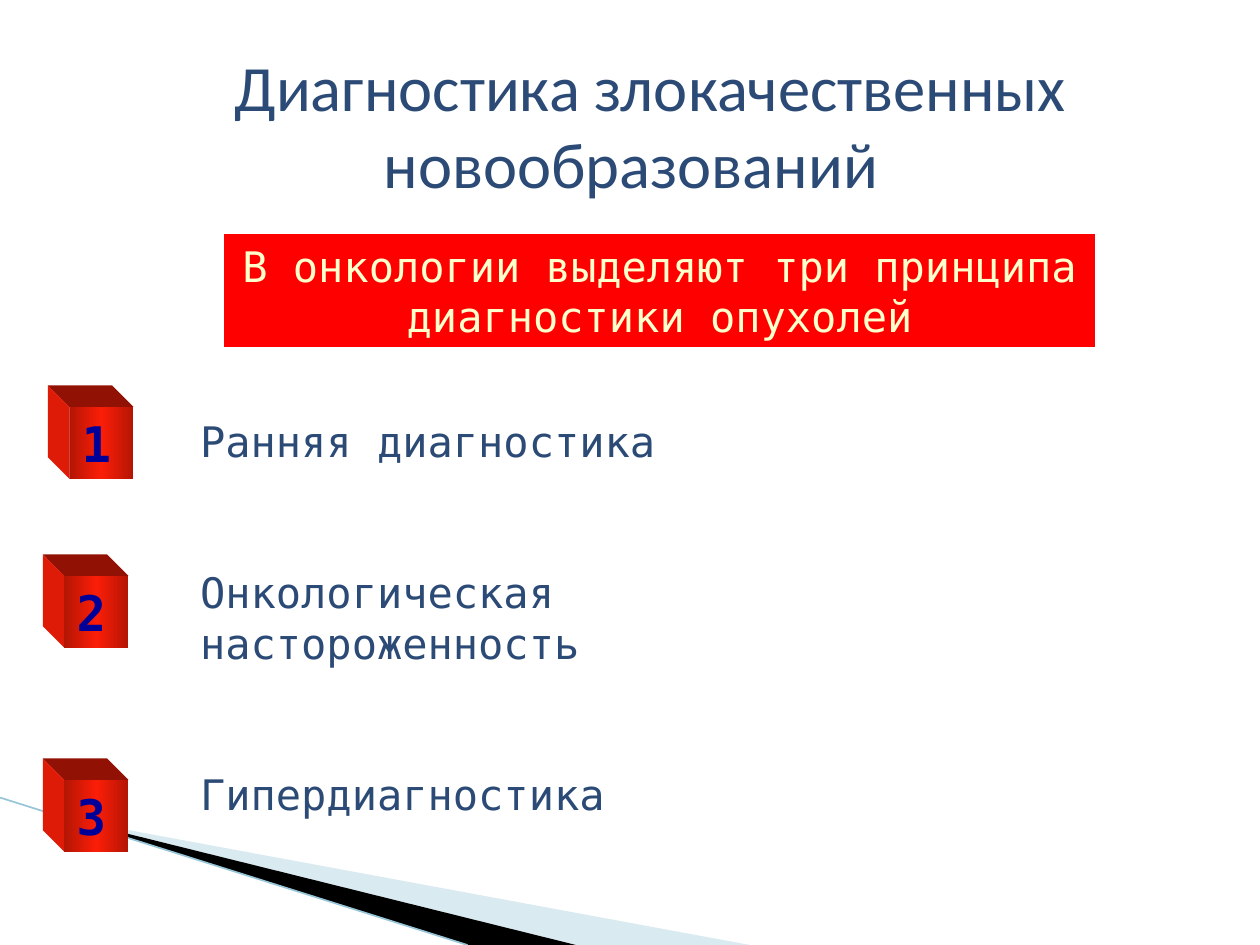
from lxml.etree import SubElement
from pptx import Presentation
from pptx.dml.color import RGBColor
from pptx.enum.shapes import MSO_CONNECTOR, MSO_SHAPE
from pptx.enum.text import MSO_ANCHOR, PP_ALIGN
from pptx.oxml.ns import qn
from pptx.util import Inches, Pt

WHITE = RGBColor(0xFF, 0xFF, 0xFF)
BLACK = RGBColor(0, 0, 0)
NAVY = RGBColor(0x2B, 0x4A, 0x76)
GREY = RGBColor(0x46, 0x46, 0x46)
PALE_BLUE = RGBColor(0xA0, 0xCB, 0xDC)
LINE_BLUE = RGBColor(0x97, 0xC5, 0xD8)
RED = RGBColor(0xFF, 0, 0)
CREAM = RGBColor(0xFF, 0xFF, 0xCC)
DIGIT_BLUE = RGBColor(0, 0, 0x99)
CUBE_EDGE = RGBColor(0xB4, 0x15, 0x05)
CUBE_MID = RGBColor(0xFB, 0x1E, 0x07)
CUBE_TOP = RGBColor(0x91, 0x12, 0x05)
CUBE_SIDE = RGBColor(0xDE, 0x1B, 0x06)
MONO, SANS = "DejaVu Sans Mono", "Calibri"


def add_run(p, text, size, color, font=MONO, bold=False):
    r = p.add_run()
    r.text = text
    r.font.name, r.font.size, r.font.bold = font, Pt(size), bold
    r.font.color.rgb = color


def add_polygon(s, points, color):
    pts = [(Inches(x), Inches(y)) for x, y in points]
    fb = s.shapes.build_freeform(*pts[0])
    fb.add_line_segments(pts[1:], close=True)
    sp = fb.convert_to_shape()
    sp.shadow.inherit = False
    sp.fill.solid()
    sp.fill.fore_color.rgb = color
    sp.line.fill.background()
    return sp


def add_corner(s, left, top, right, bottom):
    """Wedges and line across the lower left corner."""
    pale = add_polygon(s, [(left, top), (right, bottom), (4.56, bottom)], PALE_BLUE)
    color = pale.fill._xPr.find(qn("a:solidFill"))[0]
    SubElement(color, qn("a:alpha"), val="40000")
    add_polygon(s, [(left, top), (4.57, bottom), (3.72, bottom)], BLACK)
    line = s.shapes.add_connector(MSO_CONNECTOR.STRAIGHT, 0, Inches(6.33),
                                  Inches(3.71), Inches(bottom))
    line.line.color.rgb = LINE_BLUE
    line.line.width = Pt(0.95)
    SubElement(line._element.spPr, qn("a:effectLst"))


def add_title(s, left, top, width, height):
    title = s.shapes.title
    title.left, title.top = Inches(left), Inches(top)
    title.width, title.height = Inches(width), Inches(height)
    tf = title.text_frame
    tf.word_wrap = True
    tf.vertical_anchor = MSO_ANCHOR.MIDDLE
    p = tf.paragraphs[0]
    p.alignment = PP_ALIGN.CENTER
    add_run(p, " ", 36.9, GREY, bold=True)
    add_run(p, "Диагностика злокачественных новообразований", 36.9, NAVY, SANS)


def add_banner(s, left, top, width, height):
    sp = s.shapes.add_shape(MSO_SHAPE.RECTANGLE, Inches(left), Inches(top),
                            Inches(width), Inches(height))
    sp.shadow.inherit = False
    sp.fill.solid()
    sp.fill.fore_color.rgb = RED
    sp.line.color.rgb = WHITE
    sp.line.width = Pt(0.75)
    p = sp.text_frame.paragraphs[0]
    p.alignment = PP_ALIGN.CENTER
    add_run(p, "В онкологии выделяют три принципа диагностики опухолей", 24, CREAM)


def add_principles(s, left, top, width, height, principles):
    """Principles as groups of lines, two line heights apart."""
    tf = s.shapes.add_textbox(Inches(left), Inches(top),
                              Inches(width), Inches(height)).text_frame
    tf.word_wrap = True
    for i, lines in enumerate(principles):
        for j, text in enumerate(lines):
            p = tf.add_paragraph() if i or j else tf.paragraphs[0]
            pPr = p._p.get_or_add_pPr()
            pPr.set("marL", str(Inches(0.4)))
            pPr.set("indent", str(Inches(-0.28)))
            if i and j == 0:
                p.space_before = Pt(57.5)
            add_run(p, text, 24, NAVY)


def add_cube(s, left, top, width, height, digit, depth=0.17):
    """Numbered front face with its top and left sides."""
    right, bottom = left + width, top + height
    back_left, back_top = left - depth, top - depth
    add_polygon(s, [(back_left, back_top), (right - depth, back_top),
                    (right, top), (left, top)], CUBE_TOP)
    add_polygon(s, [(back_left, back_top), (left, top), (left, bottom),
                    (back_left, bottom - depth)], CUBE_SIDE)
    sp = s.shapes.add_shape(MSO_SHAPE.RECTANGLE, Inches(left), Inches(top),
                            Inches(width), Inches(height))
    sp.shadow.inherit = False
    sp.line.fill.background()
    sp.fill.gradient()
    sp.fill.gradient_angle = 0
    stops = sp.fill._xPr.find(qn("a:gradFill")).find(qn("a:gsLst"))
    for stop in list(stops):
        stops.remove(stop)
    for pos, color in ((0, CUBE_EDGE), (50, CUBE_MID), (100, CUBE_EDGE)):
        gs = SubElement(stops, qn("a:gs"), pos=str(pos * 1000))
        SubElement(gs, qn("a:srgbClr"), val=str(color))
    tf = sp.text_frame
    tf.word_wrap = False
    p = tf.paragraphs[0]
    p.alignment = PP_ALIGN.LEFT
    add_run(p, digit, 28, DIGIT_BLUE, bold=True)


def main():
    prs = Presentation()
    prs.slide_width, prs.slide_height = Inches(10), Inches(7.5)
    s = prs.slides.add_slide(prs.slide_layouts[5])
    add_corner(s, 0.54, 6.5, 5.95, 7.5)
    add_principles(s, 1.37, 3.25, 7.73, 4,
                   [["Ранняя диагностика"],
                    ["Онкологическая", "настороженность"],
                    ["Гипердиагностика"]])
    add_title(s, 0.51, 0.36, 9, 1.25)
    add_banner(s, 1.77, 1.85, 6.93, 0.91)
    corners = [(0.55, 3.23), (0.51, 4.57), (0.51, 6.19)]
    for number, (left, top) in enumerate(corners, 1):
        add_cube(s, left, top, 0.51, 0.57, str(number))
    prs.save("out.pptx")


if __name__ == "__main__":
    main()
